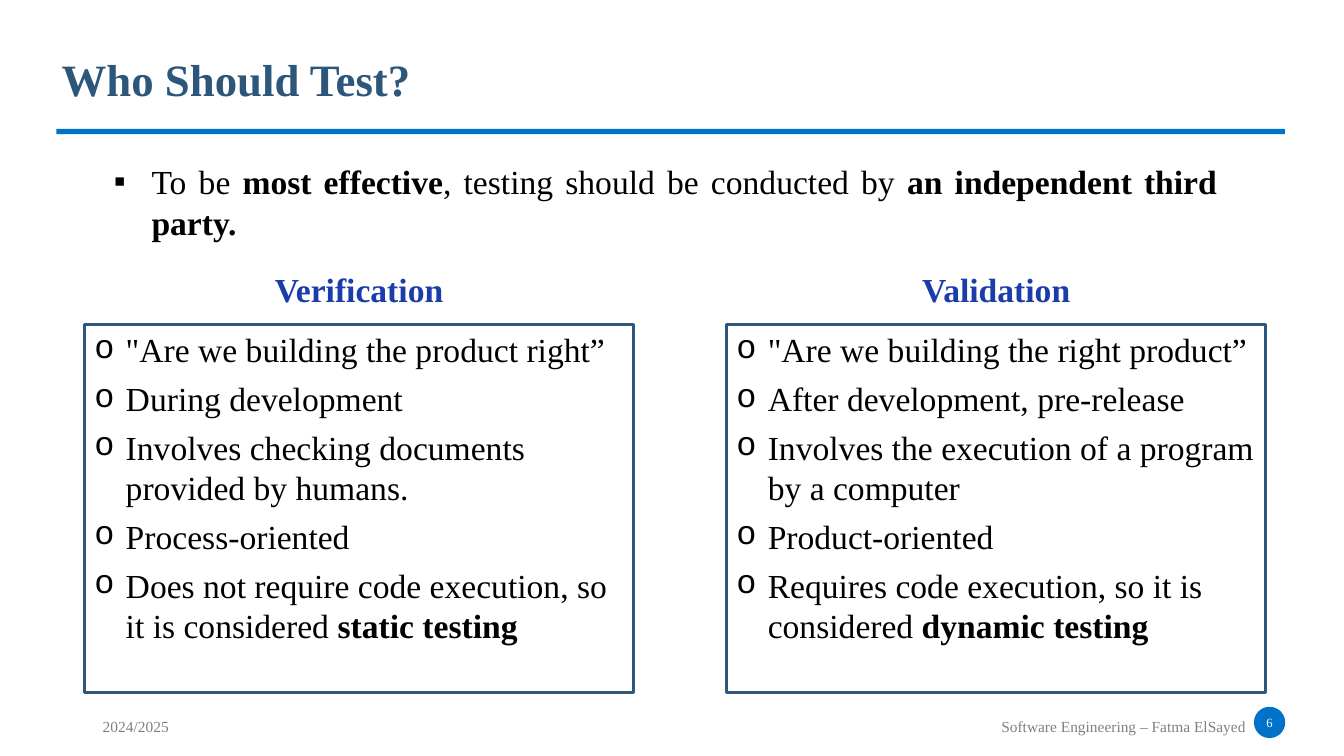
from dataclasses import dataclass

from lxml import etree
from pptx import Presentation
from pptx import util as u
from pptx.dml.color import RGBColor
from pptx.enum import shapes, text
from pptx.oxml import ns


@dataclass(frozen=True)
class Theme:
    font: str = "Times New Roman"
    ink: str = "000000"
    navy: str = "2C567A"
    heading: str = "1B3DAB"
    accent: str = "0072C7"
    muted: str = "808080"
    white: str = "FFFFFF"
    title_size: int = 32
    body_size: int = 24
    footer_size: int = 11
    number_size: int = 9


THEME = Theme()
ALIGN = text.PP_ALIGN
ANCHOR = text.MSO_ANCHOR
RECTANGLE = shapes.MSO_SHAPE.RECTANGLE
OVAL = shapes.MSO_SHAPE.OVAL

# Paragraphs are lists of (text, bold) runs.
STATEMENT = [[("To be ", False), ("most effective", True),
              (", testing should be conducted by ", False),
              ("an independent third party.", True)]]
VERIFICATION = [
    [("\"Are we building the product right”", False)],
    [("During development", False)],
    [("Involves checking documents provided by humans.", False)],
    [("Process-oriented", False)],
    [("Does not require code execution, so it is considered ", False),
     ("static testing", True)],
]
VALIDATION = [
    [("\"Are we building the right product”", False)],
    [("After development, pre-release", False)],
    [("Involves the execution of a program by a computer", False)],
    [("Product-oriented", False)],
    [("Requires code execution, so it is considered ", False),
     ("dynamic testing", True)],
]


def set_all(target, values):
    for name, value in values.items():
        setattr(target, name, value)


def place(shape, box):
    set_all(shape, dict(zip(("left", "top", "width", "height"), map(u.Cm, box))))


def write(shape, paragraphs, size, color, frame_format=None, **paragraph_format):
    """Fill a shape with paragraphs of (text, bold) runs and return the paragraphs."""
    frame = shape.text_frame
    set_all(frame, {"word_wrap": True, "auto_size": text.MSO_AUTO_SIZE.NONE,
                    "vertical_anchor": ANCHOR.TOP, **(frame_format or {})})
    for index, runs in enumerate(paragraphs):
        paragraph = frame.add_paragraph() if index else frame.paragraphs[0]
        set_all(paragraph, {"alignment": ALIGN.LEFT, **paragraph_format})
        for words, bold in runs:
            run = paragraph.add_run()
            run.text = words
            set_all(run.font, {"name": THEME.font, "size": u.Pt(size), "bold": bold})
            run.font.color.rgb = RGBColor.from_string(color)
    return frame.paragraphs


def add_bullets(paragraphs, symbol, indent, font):
    for paragraph in paragraphs:
        properties = paragraph._p.get_or_add_pPr()
        properties.set("marL", str(u.Cm(indent)))
        properties.set("indent", str(-u.Cm(indent)))
        etree.SubElement(properties, ns.qn("a:buFont"), typeface=font)
        etree.SubElement(properties, ns.qn("a:buChar"), char=symbol)


def add_text(slide, box, paragraphs, size, color, **formats):
    shape = slide.shapes.add_textbox(*map(u.Cm, box))
    return write(shape, paragraphs, size, color, **formats)


def add_block(slide, kind, box, fill=None, line=None):
    shape = slide.shapes.add_shape(kind, *map(u.Cm, box))
    shape.shadow.inherit = False
    if fill:
        shape.fill.solid()
        shape.fill.fore_color.rgb = RGBColor.from_string(fill)
    else:
        shape.fill.background()
    if line:
        shape.line.color.rgb = RGBColor.from_string(line)
        shape.line.width = u.Pt(2.25)
    else:
        shape.line.fill.background()
    return shape


def add_header(slide, box):
    """Place the title at the top of the box and the rule along its bottom."""
    left, top, width, height = box
    rule_height = 0.13
    title = slide.shapes.title
    place(title, (left - 0.12, top, width, 1.63))
    write(title, [[("Who Should Test?", True)]], THEME.title_size, THEME.navy,
          space_before=u.Pt(6.4))
    add_block(slide, RECTANGLE,
              (left, top + height - rule_height, width, rule_height), THEME.accent)


def add_statement(slide, box):
    paragraphs = add_text(slide, box, STATEMENT, THEME.body_size, THEME.ink,
                          alignment=ALIGN.JUSTIFY, space_after=u.Pt(12))
    add_bullets(paragraphs, "▪", 0.95, THEME.font)


def add_column(slide, box, heading, points):
    """Place a centred heading above a framed list."""
    left, top, width, height = box
    heading_height = 1.52
    add_text(slide, (left, top, width, heading_height), [[(heading, True)]],
             THEME.body_size, THEME.heading, alignment=ALIGN.CENTER)
    frame = add_block(slide, RECTANGLE,
                      (left, top + heading_height, width, height - heading_height),
                      line=THEME.navy)
    paragraphs = write(frame, points, THEME.body_size, THEME.ink,
                       space_after=u.Pt(6))
    add_bullets(paragraphs, "o", 0.79, "Courier New")


def add_footer(slide, box):
    """Place the year at the left, then the course and page badge at the right."""
    left, top, width, height = box
    badge = 0.79
    text_width = 7.5
    text_right = left + width - badge + 0.05
    for words, start, alignment in (
            ("2024/2025", left, ALIGN.LEFT),
            ("Software Engineering – Fatma ElSayed", text_right - text_width,
             ALIGN.RIGHT)):
        add_text(slide, (start, top + 0.13, text_width, height - 0.13),
                 [[(words, False)]], THEME.footer_size, THEME.muted,
                 alignment=alignment)
    circle = add_block(slide, OVAL, (left + width - badge, top, badge, badge),
                       THEME.accent)
    margins = dict.fromkeys(
        ("margin_left", "margin_right", "margin_top", "margin_bottom"), 0)
    write(circle, [[("6", False)]], THEME.number_size, THEME.white,
          {**margins, "vertical_anchor": ANCHOR.MIDDLE}, alignment=ALIGN.CENTER)


def main():
    presentation = Presentation()
    set_all(presentation, {"slide_width": u.Cm(33.87), "slide_height": u.Cm(19.05)})
    slide = presentation.slides.add_slide(presentation.slide_layouts[5])
    add_header(slide, (1.42, 1.17, 30.96, 2.21))
    add_statement(slide, (2.62, 3.94, 28.3, 2.31))
    add_column(slide, (2.13, 6.65, 13.84, 10.8), "Verification", VERIFICATION)
    add_column(slide, (18.31, 6.65, 13.59, 10.8), "Validation", VALIDATION)
    add_footer(slide, (2.34, 17.81, 30.05, 0.86))
    presentation.save("out.pptx")


if __name__ == "__main__":
    main()
